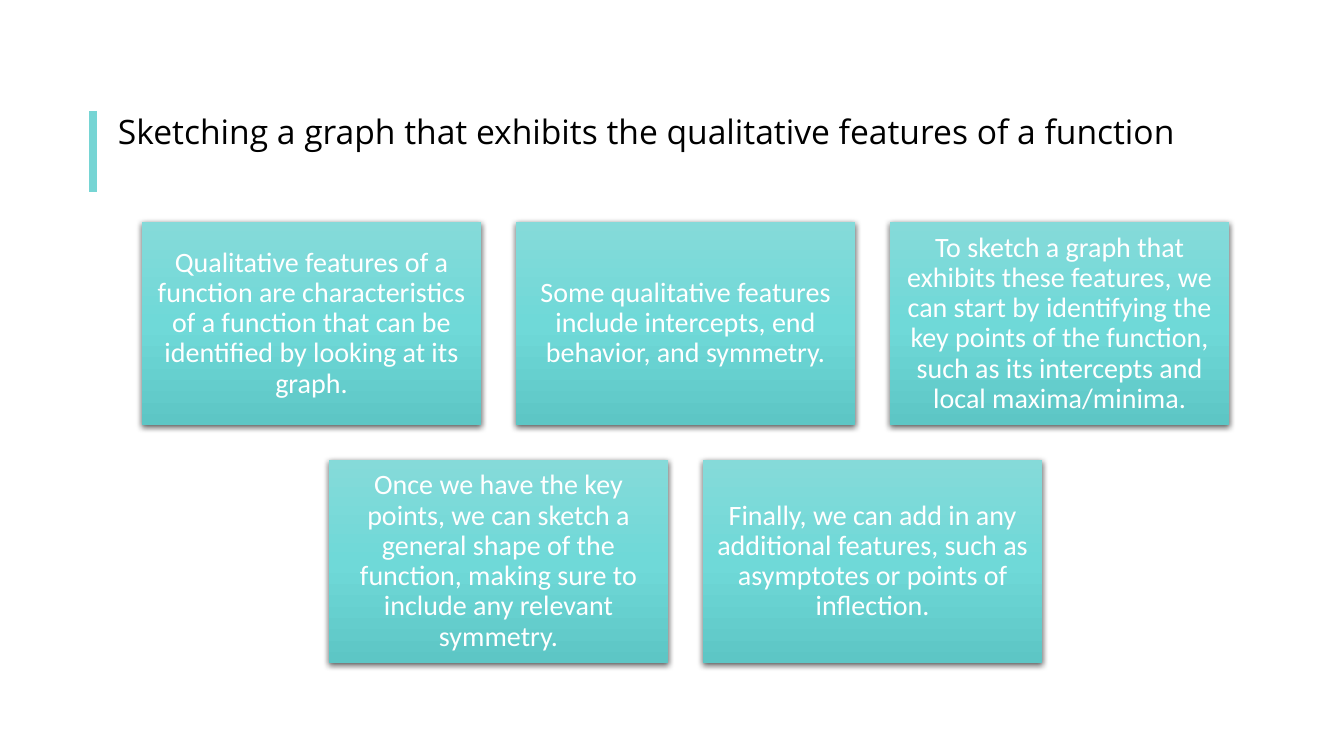
from dataclasses import dataclass

from pptx import Presentation, oxml, util as u
from pptx.dml.color import RGBColor
from pptx.enum import shapes, text
from pptx.oxml import ns
from pptx.slide import Slide
from pptx.text.text import TextFrame

TEAL = RGBColor(0x76, 0xD5, 0xD4)
LIGHT = RGBColor(0x85, 0xDA, 0xD9)
MID = RGBColor(0x6F, 0xD9, 0xD8)
DARK = RGBColor(0x5D, 0xC6, 0xC5)
BLACK = RGBColor(0, 0, 0)
WHITE = RGBColor(0xFF, 0xFF, 0xFF)

CARD_W, CARD_H = 3.37, 2.02
GAP = 0.34
MIDDLE = 6.8
TOP = 2.2

TITLE = "Sketching a graph that exhibits the qualitative features of a function"
ROWS = [
    [
        "Qualitative features of a function are characteristics of a function "
        "that can be identified by looking at its graph.",
        "Some qualitative features include intercepts, end behavior, and symmetry.",
        "To sketch a graph that exhibits these features, we can start by "
        "identifying the key points of the function, such as its intercepts "
        "and local maxima/minima.",
    ],
    [
        "Once we have the key points, we can sketch a general shape of the "
        "function, making sure to include any relevant symmetry.",
        "Finally, we can add in any additional features, such as asymptotes "
        "or points of inflection.",
    ],
]


@dataclass
class Card:
    words: str
    left: float
    top: float


def lay_out(rows: list[list[str]]) -> list[Card]:
    """Centre each row of cards on the same axis."""
    cards = []
    for r, row in enumerate(rows):
        left = MIDDLE - (len(row) * (CARD_W + GAP) - GAP) / 2
        for c, words in enumerate(row):
            cards.append(Card(words, left + c * (CARD_W + GAP),
                              TOP + r * (CARD_H + GAP)))
    return cards


def set_text(frame: TextFrame, words: str, font: str, size: int,
             color: RGBColor, align: text.PP_ALIGN) -> None:
    frame.text = words
    frame.word_wrap = True
    frame.auto_size = text.MSO_AUTO_SIZE.NONE
    para = frame.paragraphs[0]
    para.alignment = align
    para.line_spacing = 0.9
    run = para.runs[0].font
    run.name, run.size = font, u.Pt(size)
    run.color.rgb = color


def add_title(slide: Slide) -> None:
    title = slide.shapes.title
    title.left, title.top = u.Inches(1.07), u.Inches(1.1)
    title.width, title.height = u.Inches(11.5), u.Inches(0.8)
    title.text_frame.vertical_anchor = text.MSO_ANCHOR.TOP
    set_text(title.text_frame, TITLE, "Open Sans", 24, BLACK,
             text.PP_ALIGN.LEFT)


def add_bar(slide: Slide) -> None:
    x = u.Inches(0.92)
    bar = slide.shapes.add_connector(
        shapes.MSO_CONNECTOR.STRAIGHT, x, u.Inches(1.1), x, u.Inches(1.9))
    bar.line.color.rgb = TEAL
    bar.line.width = u.Pt(6)
    bar._element.spPr.append(
        oxml.parse_xml(f"<a:effectLst {ns.nsdecls('a')}/>"))


def add_card(slide: Slide, card: Card) -> None:
    box = slide.shapes.add_shape(
        shapes.MSO_SHAPE.RECTANGLE, u.Inches(card.left), u.Inches(card.top),
        u.Inches(CARD_W), u.Inches(CARD_H))
    box.line.fill.background()
    stops = "".join(
        f'<a:gs pos="{pos}"><a:srgbClr val="{color}"/></a:gs>'
        for pos, color in ((0, LIGHT), (50000, MID), (100000, DARK)))
    props = box._element.spPr
    props.find(ns.qn("a:ln")).addprevious(oxml.parse_xml(
        f'<a:gradFill {ns.nsdecls("a")}><a:gsLst>{stops}</a:gsLst>'
        '<a:lin ang="5400000" scaled="0"/></a:gradFill>'))
    props.append(oxml.parse_xml(
        f'<a:effectLst {ns.nsdecls("a")}>'
        f'<a:outerShdw blurRad="{u.Pt(4.5)}" dist="{u.Pt(1.5)}" dir="5400000" '
        f'algn="ctr" rotWithShape="0"><a:srgbClr val="{BLACK}">'
        '<a:alpha val="63000"/></a:srgbClr></a:outerShdw></a:effectLst>'))
    frame = box.text_frame
    frame.vertical_anchor = text.MSO_ANCHOR.MIDDLE
    frame.margin_left = frame.margin_right = u.Inches(0.08)
    frame.margin_top = frame.margin_bottom = u.Inches(0.08)
    set_text(frame, card.words, "Calibri", 20, WHITE, text.PP_ALIGN.CENTER)


def main() -> None:
    deck = Presentation()
    deck.slide_width, deck.slide_height = u.Inches(13.33), u.Inches(7.5)
    slide = deck.slides.add_slide(deck.slide_layouts[5])
    add_bar(slide)
    add_title(slide)
    for card in lay_out(ROWS):
        add_card(slide, card)
    deck.save("out.pptx")


if __name__ == "__main__":
    main()
